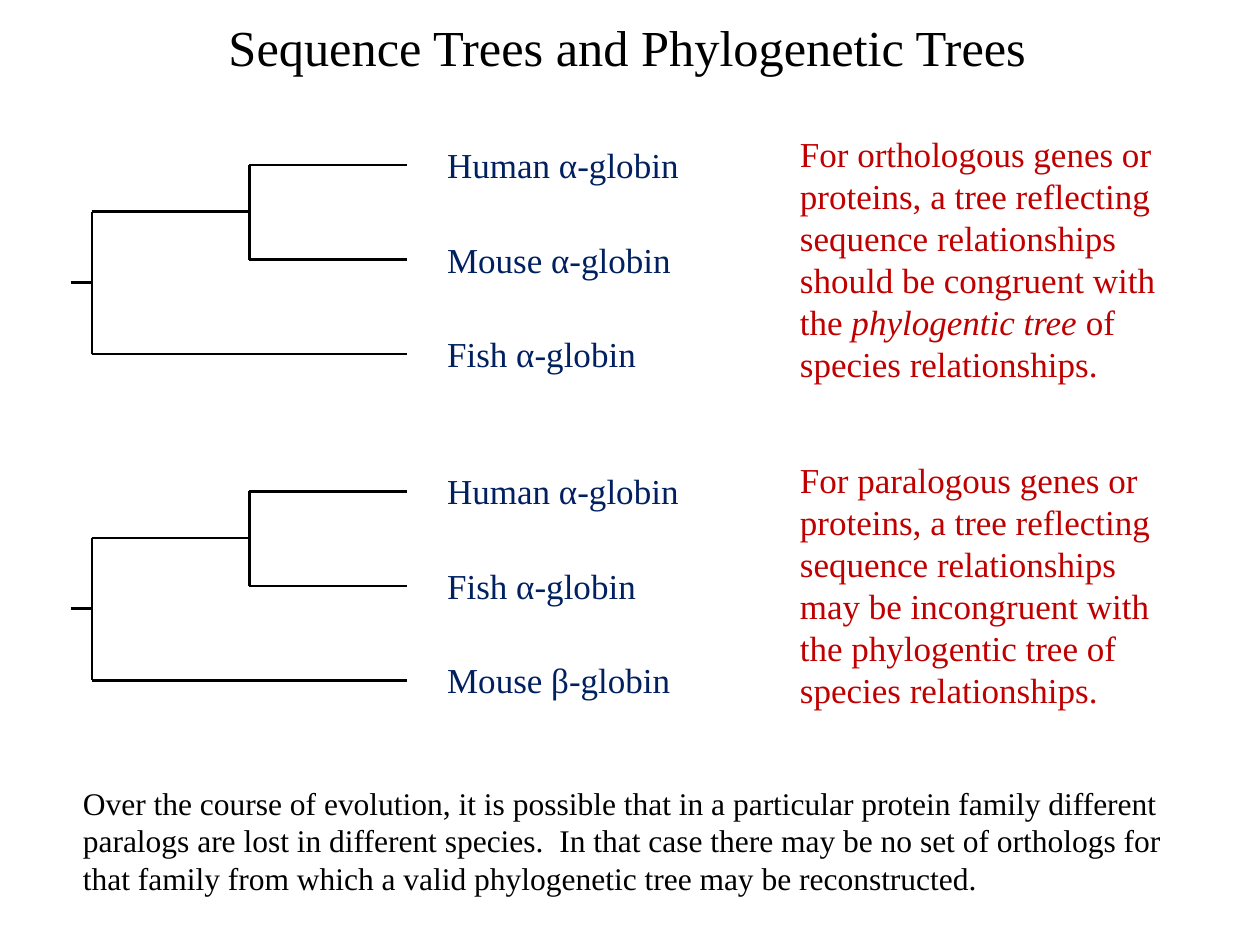
import pptx
import pptx.dml.color
import pptx.enum.shapes
import pptx.enum.text
import pptx.oxml.ns
import pptx.util
import lxml.etree

EMU_PER_PX = 9144
BLACK, NAVY, RED = "000000", "002060", "C00000"


def px(length):
    """Turn px, 100 to the inch, into EMU."""
    return pptx.util.Emu(length * EMU_PER_PX)


def color(value):
    """Turn a hex string into a colour."""
    return pptx.dml.color.RGBColor.from_string(value)


class SlideBuilder:
    """Hold the style and the current slide."""

    font_name = "Times New Roman"
    line_width = 1.5
    root_x, parent_x, tip_x, label_x = 73, 198, 323, 345
    stem, tip_gap, label_rise = 17, 75, 22

    def __init__(self, slide):
        """Keep the slide to draw on."""
        self.slide = slide

    def style(self, paragraph, size, hex_color):
        """Set the font of a paragraph."""
        paragraph.font.name = self.font_name
        paragraph.font.size = pptx.util.Pt(size)
        paragraph.font.color.rgb = color(hex_color)

    def title(self, wording, left, top, width, height):
        """Fill and place the title placeholder."""
        heading = self.slide.shapes.title
        heading.left, heading.top = px(left), px(top)
        heading.width, heading.height = px(width), px(height)
        frame = heading.text_frame
        frame.text = wording
        frame.vertical_anchor = pptx.enum.text.MSO_ANCHOR.MIDDLE
        frame.auto_size = pptx.enum.text.MSO_AUTO_SIZE.NONE
        frame.paragraphs[0].alignment = pptx.enum.text.PP_ALIGN.CENTER
        self.style(frame.paragraphs[0], 28.8, BLACK)

    def text(self, shapes, runs, left, top, width, height, size, hex_color, wrap=True):
        """Add a text box from (wording, italic) runs."""
        frame = shapes.add_textbox(px(left), px(top), px(width), px(height)).text_frame
        frame.word_wrap = wrap
        frame.auto_size = pptx.enum.text.MSO_AUTO_SIZE.SHAPE_TO_FIT_TEXT
        paragraph = frame.paragraphs[0]
        self.style(paragraph, size, hex_color)
        for wording, italic in runs:
            run = paragraph.add_run()
            run.text = wording
            if italic:
                run.font.italic = True

    def line(self, shapes, x1, y1, x2, y2):
        """Add one straight branch."""
        branch = shapes.add_connector(
            pptx.enum.shapes.MSO_CONNECTOR.STRAIGHT, px(x1), px(y1), px(x2), px(y2))
        branch.line.color.rgb = color(BLACK)
        branch.line.width = pptx.util.Pt(self.line_width)
        properties = branch._element.spPr
        lxml.etree.SubElement(properties, pptx.oxml.ns.qn("a:effectLst"))

    def tree(self, top, species):
        """Add a three-tip tree whose first two tips are paired."""
        shapes = self.slide.shapes.add_group_shape().shapes
        first, second, third = (top + i * self.tip_gap for i in range(3))
        parent = (first + second) // 2
        root = (parent + third) // 2
        for branch in (
            (self.root_x, parent, self.root_x, third),
            (self.root_x, third, self.tip_x, third),
            (self.root_x, parent, self.parent_x, parent),
            (self.parent_x, first, self.parent_x, second),
            (self.parent_x, first, self.tip_x, first),
            (self.parent_x, second, self.tip_x, second),
            (self.root_x - self.stem, root, self.root_x, root),
        ):
            self.line(shapes, *branch)
        for tip, (name, width) in zip((first, second, third), species):
            self.text(shapes, [(name, False)], self.label_x, tip - self.label_rise,
                      width, 44, 20, NAVY, wrap=False)


def main():
    """Build and save the slide."""
    deck = pptx.Presentation()
    deck.slide_width, deck.slide_height = px(1000), px(750)
    builder = SlideBuilder(deck.slides.add_slide(deck.slide_layouts[5]))
    shapes = builder.slide.shapes

    builder.title("Sequence Trees and Phylogenetic Trees", 48, 8, 900, 58)
    builder.tree(131, [("Human α-globin", 204), ("Mouse α-globin", 200), ("Fish α-globin", 171)])
    builder.tree(390, [("Human α-globin", 204), ("Fish α-globin", 171), ("Mouse β-globin", 199)])

    orthologs = [
        ("For orthologous genes or proteins, a tree reflecting sequence relationships "
         "should be congruent with the ", False),
        ("phylogentic tree ", True),
        ("of species relationships.", False),
    ]
    paralogs = [
        ("For paralogous genes or proteins, a tree reflecting sequence relationships "
         "may be incongruent with the phylogentic tree of species relationships.", False),
    ]
    for top, explanation in ((100, orthologs), (359, paralogs)):
        builder.text(shapes, explanation, 625, top, 315, 212, 20, RED)

    conclusion = (
        "Over the course of evolution, it is possible that in a particular protein family "
        "different paralogs are lost in different species.  In that case there may be no set "
        "of orthologs for that family from which a valid phylogenetic tree may be reconstructed.")
    builder.text(shapes, [(conclusion, False)], 56, 617, 883, 101, 18, BLACK)

    deck.save("out.pptx")


if __name__ == "__main__":
    main()
